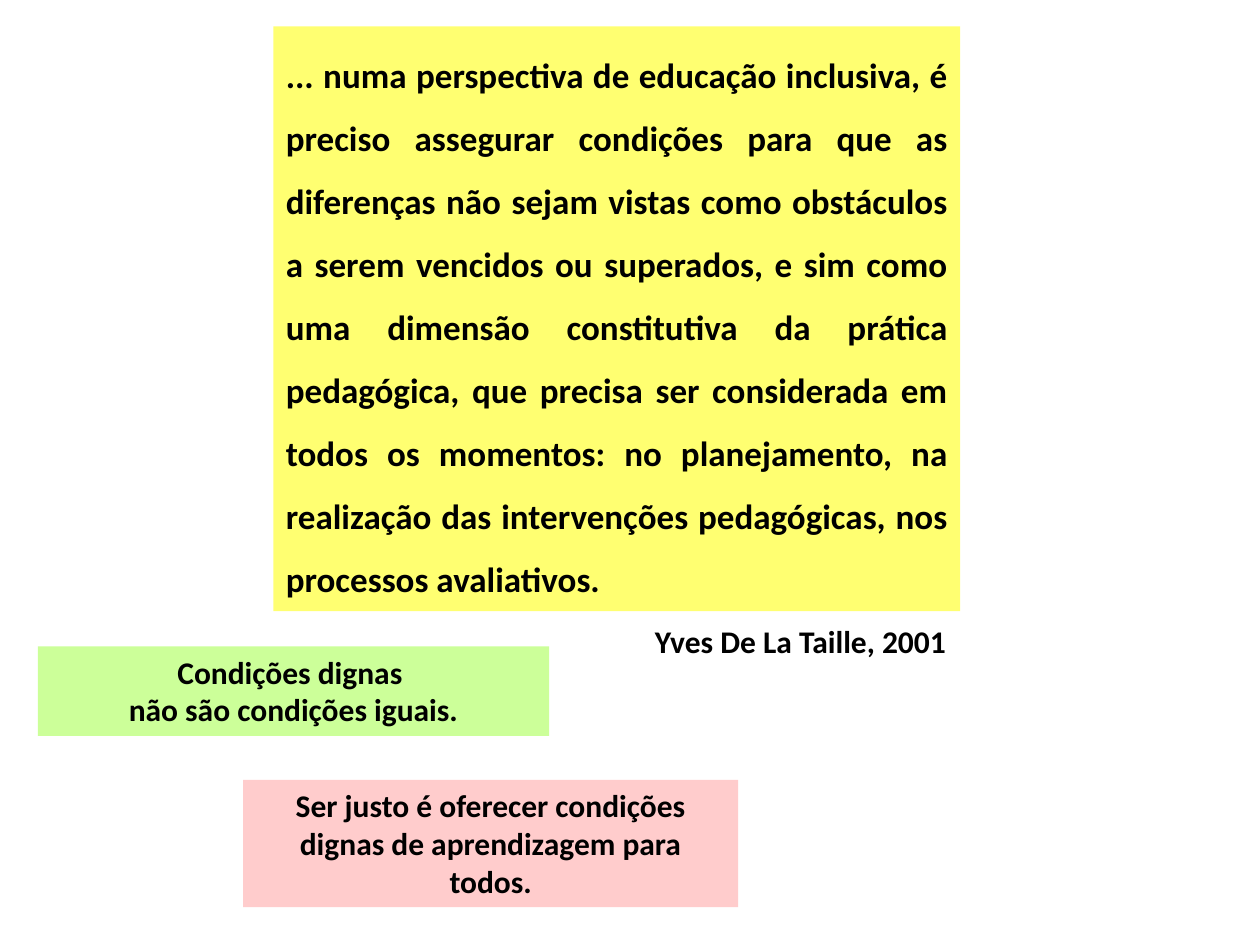
from dataclasses import dataclass
from typing import Optional

import pptx
import pptx.dml.color
import pptx.enum.shapes
import pptx.enum.text
import pptx.util

Inches = pptx.util.Inches
Align = pptx.enum.text.PP_ALIGN


@dataclass(frozen=True)
class Theme:
    font: str = "Calibri"
    ink: str = "000000"
    quote_fill: str = "FFFF71"
    dignity_fill: str = "CCFF99"
    justice_fill: str = "FFCCCC"
    quote_size: int = 20
    note_size: int = 18


THEME = Theme()


@dataclass(frozen=True)
class Panel:
    left: float
    top: float
    width: float
    height: float
    lines: tuple[str, ...]
    fill: Optional[str] = None
    size: int = THEME.note_size
    align: Align = Align.CENTER
    line_spacing: Optional[float] = None


PANELS = (
    Panel(0.3, 5.13, 4.06, 0.71,
          ("Condições dignas ", "não são condições iguais."),
          THEME.dignity_fill),
    Panel(1.93, 6.19, 3.93, 1.01,
          ("Ser justo é oferecer condições dignas de aprendizagem para todos.",),
          THEME.justice_fill),
    Panel(5.1, 4.89, 2.53, 0.4, ("Yves De La Taille, 2001",), align=Align.LEFT),
    Panel(2.17, 0.21, 5.45, 4.64,
          ("... numa perspectiva de educação inclusiva, é preciso assegurar "
           "condições para que as diferenças não sejam vistas como obstáculos "
           "a serem vencidos ou superados, e sim como uma dimensão constitutiva "
           "da prática pedagógica, que precisa ser considerada em todos os "
           "momentos: no planejamento, na realização das intervenções "
           "pedagógicas, nos processos avaliativos.",),
          THEME.quote_fill, THEME.quote_size, Align.JUSTIFY, 1.5),
)


def rgb(code: str) -> pptx.dml.color.RGBColor:
    return pptx.dml.color.RGBColor.from_string(code)


def draw_panel(slide: pptx.slide.Slide, panel: Panel) -> None:
    place = [Inches(n) for n in (panel.left, panel.top, panel.width, panel.height)]
    if panel.fill:
        box = slide.shapes.add_shape(
            pptx.enum.shapes.MSO_SHAPE.RECTANGLE, *place)
        box.shadow.inherit = False
        box.fill.solid()
        box.fill.fore_color.rgb = rgb(panel.fill)
        box.line.fill.background()
    else:
        box = slide.shapes.add_textbox(*place)

    frame = box.text_frame
    frame.word_wrap = panel.fill is not None
    frame.auto_size = pptx.enum.text.MSO_AUTO_SIZE.SHAPE_TO_FIT_TEXT
    frame.vertical_anchor = pptx.enum.text.MSO_ANCHOR.TOP
    frame.text = "\n".join(panel.lines)
    for paragraph in frame.paragraphs:
        paragraph.alignment = panel.align
        paragraph.line_spacing = panel.line_spacing
        paragraph.font.name = THEME.font
        paragraph.font.size = pptx.util.Pt(panel.size)
        paragraph.font.bold = True
        paragraph.font.color.rgb = rgb(THEME.ink)


def main() -> None:
    deck = pptx.Presentation()
    deck.slide_width = Inches(10)
    deck.slide_height = Inches(7.5)
    slide = deck.slides.add_slide(deck.slide_layouts[6])
    for panel in PANELS:
        draw_panel(slide, panel)
    deck.save("out.pptx")


if __name__ == "__main__":
    main()
